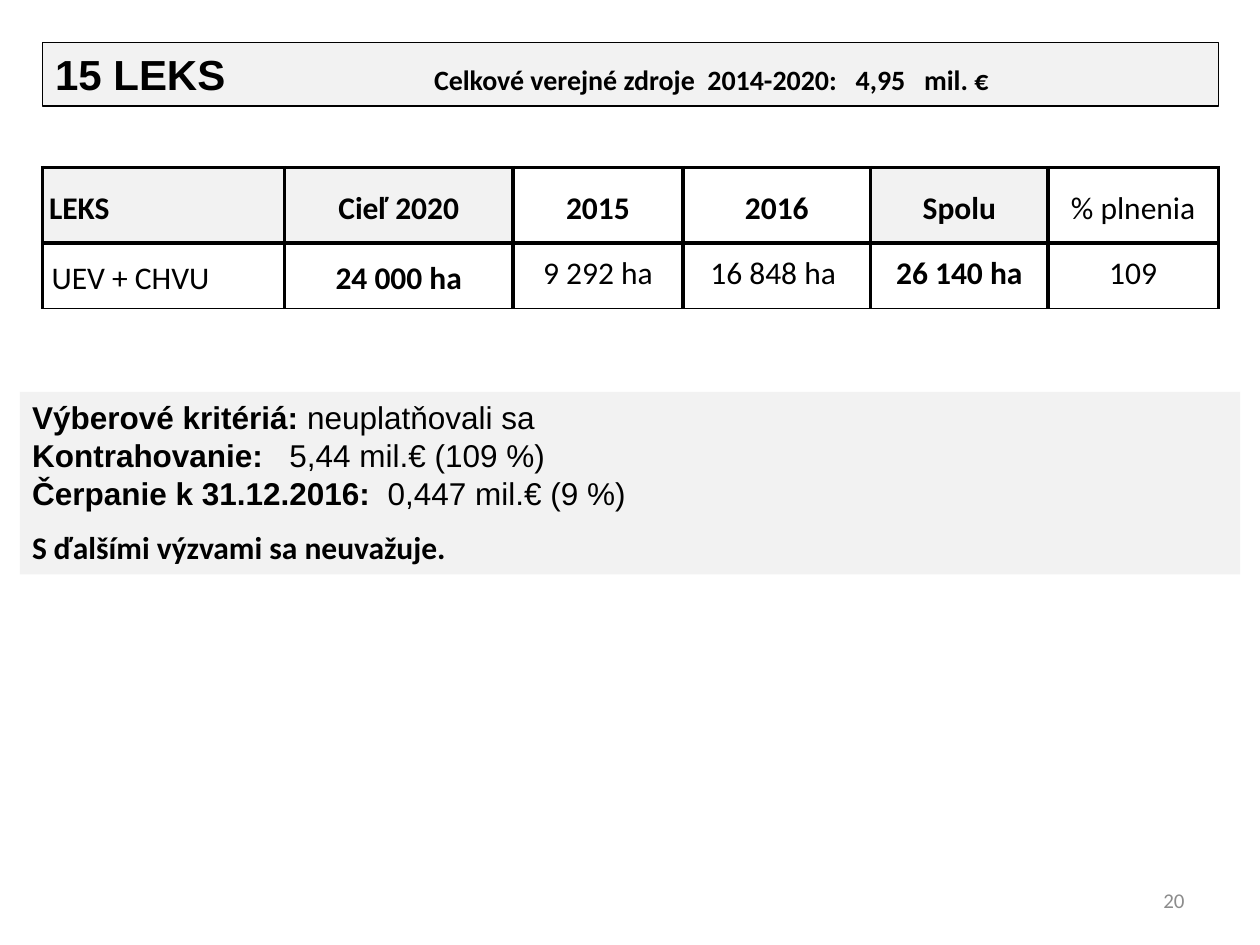
from dataclasses import dataclass

from lxml import etree
from pptx import Presentation
from pptx.dml.color import RGBColor
from pptx.enum.shapes import MSO_SHAPE
from pptx.enum.text import MSO_ANCHOR, PP_ALIGN
from pptx.oxml.ns import qn
from pptx.util import Cm, Pt

RECT = MSO_SHAPE.RECTANGLE
TOP, MIDDLE = MSO_ANCHOR.TOP, MSO_ANCHOR.MIDDLE
LEFT, CENTER, RIGHT = PP_ALIGN.LEFT, PP_ALIGN.CENTER, PP_ALIGN.RIGHT
COLORS = {"black": "000000", "white": "FFFFFF", "panel": "F2F2F2", "muted": "8C8C8C"}
COLUMN_WIDTHS = [4.88, 4.6, 3.43, 3.78, 3.58, 3.43]
ROW_HEIGHTS = [1.52, 1.32]


@dataclass
class Run:
    text: str
    bold: bool = True
    font: str = "Arial"
    size: float = 18


@dataclass
class Box:
    left: float
    top: float
    width: float
    height: float


@dataclass
class CellText:
    text: str
    bold: bool = False
    fill: str | None = None
    align: PP_ALIGN = CENTER
    line_spacing: float = 1.15
    margins: tuple[float, float] = (0.18, 0.1)


HEADER = [
    CellText("LEKS", True, "panel", LEFT, margins=(0.13, 0.08)),
    CellText("Cieľ 2020", True, "panel", margins=(0.13, 0.08)),
    CellText("2015", True, margins=(0.13, 0.08)),
    CellText("2016", True, margins=(0.13, 0.08)),
    CellText("Spolu", True, "panel", margins=(0.13, 0.08)),
    CellText("% plnenia", margins=(0, 0)),
]
VALUES = [
    CellText("UEV + CHVU", align=LEFT),
    CellText("24 000 ha", True, "white"),
    CellText("9 292 ha", False, "white", line_spacing=0.75),
    CellText("16 848 ha ", False, "white", line_spacing=0.75),
    CellText("26 140 ha", True, "white", line_spacing=0.75),
    CellText("109", False, "white", line_spacing=0.75),
]
TITLE = [Run("15 LEKS\t", size=24),
         Run("Celkové verejné zdroje  2014-2020:   4,95   mil. €", font="Calibri", size=16)]
SUMMARY = [
    [Run("Výberové kritériá: "), Run("neuplatňovali sa", False)],
    [Run("Kontrahovanie:  "), Run(" 5,44 mil.€ (109 %)", False)],
    [Run("Čerpanie k 31.12.2016: "), Run(" 0,447 mil.€ (9 %)", False)],
    [Run("S ďalšími výzvami sa neuvažuje.", font="Calibri")],
]


def rgb(name: str) -> RGBColor:
    return RGBColor.from_string(COLORS[name])


def style_font(font, name: str, size: float, bold: bool, color: str = "black") -> None:
    font.name, font.size, font.bold = name, Pt(size), bold
    font.color.rgb = rgb(color)


def add_panel(slide, box: Box, paragraphs: list[list[Run]], line: float | None = None):
    sp = slide.shapes.add_shape(RECT, Cm(box.left), Cm(box.top), Cm(box.width), Cm(box.height))
    sp.shadow.inherit = False
    sp.fill.solid()
    sp.fill.fore_color.rgb = rgb("panel")
    if line is None:
        sp.line.fill.background()
    else:
        sp.line.color.rgb = rgb("black")
        sp.line.width = Pt(line)
    tf = sp.text_frame
    tf.word_wrap = True
    tf.vertical_anchor = TOP
    for i, runs in enumerate(paragraphs):
        p = tf.add_paragraph() if i else tf.paragraphs[0]
        p.alignment = LEFT
        for run in runs:
            r = p.add_run()
            r.text = run.text
            style_font(r.font, run.font, run.size, run.bold)
    return sp


def add_tab_stop(p, position: float) -> None:
    tabs = etree.SubElement(p._p.get_or_add_pPr(), qn("a:tabLst"))
    etree.SubElement(tabs, qn("a:tab"), pos=str(Cm(position)), algn="l")


def set_borders(cell, bottom: float) -> None:
    tc_pr = cell._tc.get_or_add_tcPr()
    for side, width in (("L", 2.25), ("R", 2.25), ("T", 2.25), ("B", bottom)):
        ln = etree.SubElement(tc_pr, qn(f"a:ln{side}"), w=str(Pt(width)))
        fill = etree.SubElement(ln, qn("a:solidFill"))
        etree.SubElement(fill, qn("a:srgbClr"), val=COLORS["black"])


def fill_cell(cell, item: CellText, bottom: float) -> None:
    set_borders(cell, bottom)
    if item.fill:
        cell.fill.solid()
        cell.fill.fore_color.rgb = rgb(item.fill)
    else:
        cell.fill.background()
    cell.vertical_anchor = MIDDLE
    cell.margin_left = cell.margin_right = Cm(item.margins[0])
    cell.margin_top = cell.margin_bottom = Cm(item.margins[1])
    p = cell.text_frame.paragraphs[0]
    p.text = item.text
    p.alignment = item.align
    p.line_spacing = item.line_spacing
    p.space_before = Pt(4.5)
    style_font(p.font, "Calibri", 18, item.bold)


def add_results_table(slide, left: float, top: float) -> None:
    rows = [HEADER, VALUES]
    table = slide.shapes.add_table(
        len(rows), len(COLUMN_WIDTHS), Cm(left), Cm(top),
        Cm(sum(COLUMN_WIDTHS)), Cm(sum(ROW_HEIGHTS))).table
    table.first_row = table.horz_banding = False
    for column, width in zip(table.columns, COLUMN_WIDTHS):
        column.width = Cm(width)
    for i, (items, height) in enumerate(zip(rows, ROW_HEIGHTS)):
        table.rows[i].height = Cm(height)
        for j, item in enumerate(items):
            fill_cell(table.cell(i, j), item, 2.25 if i == 0 else 1)


def add_page_number(slide, box: Box, number: str) -> None:
    sp = slide.shapes.add_textbox(Cm(box.left), Cm(box.top), Cm(box.width), Cm(box.height))
    tf = sp.text_frame
    tf.word_wrap = True
    tf.vertical_anchor = MIDDLE
    p = tf.paragraphs[0]
    p.text = number
    p.alignment = RIGHT
    style_font(p.font, "Calibri", 12, False, "muted")


def main() -> None:
    prs = Presentation()
    prs.slide_width, prs.slide_height = Cm(25.4), Cm(19.05)
    slide = prs.slides.add_slide(prs.slide_layouts[6])
    add_results_table(slide, 0.86, 3.38)
    title = add_panel(slide, Box(0.86, 0.86, 23.7, 1.28), [TITLE], line=0.75)
    add_tab_stop(title.text_frame.paragraphs[0], 7.64)
    summary = add_panel(slide, Box(0.4, 7.9, 24.6, 3.68), SUMMARY)
    summary.text_frame.paragraphs[-1].space_before = Pt(9.5)
    add_page_number(slide, Box(18.2, 17.65, 5.93, 1.01), "20")
    prs.save("out.pptx")


if __name__ == "__main__":
    main()
